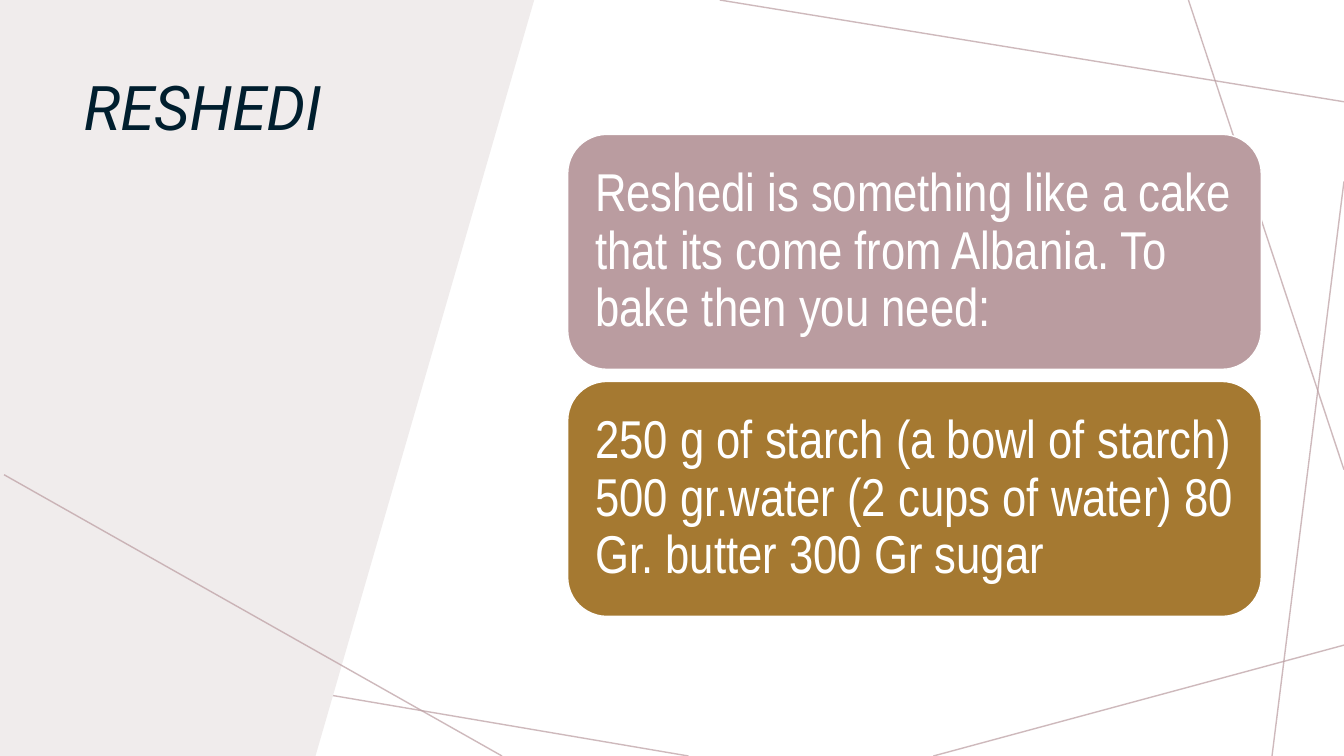
from typing import NamedTuple

from lxml.etree import SubElement
from pptx import Presentation
from pptx.dml.color import RGBColor
from pptx.enum.shapes import MSO_CONNECTOR, MSO_SHAPE
from pptx.enum.text import MSO_ANCHOR, PP_ALIGN
from pptx.oxml.ns import qn
from pptx.slide import Slide
from pptx.text.text import TextFrame
from pptx.util import Pt

WHITE = RGBColor(0xFF, 0xFF, 0xFF)
MAUVE = RGBColor(0xBA, 0x9C, 0xA0)
OCHRE = RGBColor(0xA5, 0x79, 0x31)
PALE = RGBColor(0xF0, 0xEC, 0xEC)
NAVY = RGBColor(0x00, 0x1E, 0x2E)

WIDTH, HEIGHT = 960, 540
CARD_LEFT, CARD_TOP = 405.5, 96
CARD_WIDTH, CARD_HEIGHT = 495.4, 167.8
CARD_PITCH = 176.5
CARD_INSET = 11.5


class Ray(NamedTuple):
    x1: float
    y1: float
    x2: float
    y2: float


class Card(NamedTuple):
    text: str
    color: RGBColor


RAYS_BEHIND_PANEL = [
    Ray(491.8, HEIGHT, 0, 456.4),
    Ray(WIDTH, 460.8, 666.7, HEIGHT),
    Ray(WIDTH, 129.6, 908.6, HEIGHT),
    Ray(WIDTH, 335.5, 848.9, 0),
    Ray(WIDTH, 72.7, 514.1, 0),
]
RAY_OVER_PANEL = Ray(2.9, 339.1, 358.6, HEIGHT)

CARDS = [
    Card("Reshedi is something like a cake that its come from Albania. "
         "To bake then you need:", MAUVE),
    Card("250 g of starch (a bowl of starch) 500 gr.water (2 cups of water) "
         "80 Gr. butter 300 Gr sugar", OCHRE),
]


def draw_ray(slide: Slide, ray: Ray) -> None:
    line = slide.shapes.add_connector(
        MSO_CONNECTOR.STRAIGHT, Pt(ray.x1), Pt(ray.y1), Pt(ray.x2), Pt(ray.y2))
    line.line.color.rgb = MAUVE
    line.line.width = Pt(1)
    properties = line.element.spPr
    color = properties.find(".//" + qn("a:srgbClr"))
    SubElement(color, qn("a:alpha"), val="70000")
    SubElement(properties, qn("a:effectLst"))


def draw_panel(slide: Slide) -> None:
    outline = slide.shapes.build_freeform(Pt(0), Pt(0))
    outline.add_line_segments(
        [(Pt(381.6), Pt(0)), (Pt(225.4), Pt(HEIGHT)), (Pt(0), Pt(HEIGHT))])
    panel = outline.convert_to_shape()
    panel.shadow.inherit = False
    panel.fill.solid()
    panel.fill.fore_color.rgb = PALE
    panel.line.fill.background()


def write(frame: TextFrame, text: str, font: str, size: float,
          color: RGBColor, italic: bool = False) -> None:
    frame.word_wrap = True
    frame.text = text
    paragraph = frame.paragraphs[0]
    paragraph.alignment = PP_ALIGN.LEFT
    paragraph.line_spacing = 0.9
    style = paragraph.runs[0].font
    style.name = font
    style.size = Pt(size)
    style.color.rgb = color
    style.italic = italic


def draw_card(slide: Slide, card: Card, top: float) -> None:
    box = slide.shapes.add_shape(
        MSO_SHAPE.ROUNDED_RECTANGLE,
        Pt(CARD_LEFT), Pt(top), Pt(CARD_WIDTH), Pt(CARD_HEIGHT))
    box.shadow.inherit = False
    box.fill.solid()
    box.fill.fore_color.rgb = card.color
    box.line.color.rgb = WHITE
    box.line.width = Pt(1)
    frame = box.text_frame
    frame.margin_left = frame.margin_right = Pt(CARD_INSET)
    frame.margin_top = frame.margin_bottom = Pt(CARD_INSET)
    frame.vertical_anchor = MSO_ANCHOR.MIDDLE
    write(frame, card.text, "Arial Narrow", 38, WHITE)


def main() -> None:
    deck = Presentation()
    deck.slide_width, deck.slide_height = Pt(WIDTH), Pt(HEIGHT)
    slide = deck.slides.add_slide(deck.slide_layouts[6])

    # Background lines and slanted panel
    for ray in RAYS_BEHIND_PANEL:
        draw_ray(slide, ray)
    draw_panel(slide)

    # Title
    title = slide.shapes.add_textbox(Pt(52.6), Pt(51.8), Pt(254.2), Pt(280.8))
    write(title.text_frame, "RESHEDI", "Roboto", 44, NAVY, italic=True)

    draw_ray(slide, RAY_OVER_PANEL)

    # Recipe cards
    for row, card in enumerate(CARDS):
        draw_card(slide, card, CARD_TOP + row * CARD_PITCH)

    deck.save("out.pptx")


if __name__ == "__main__":
    main()
